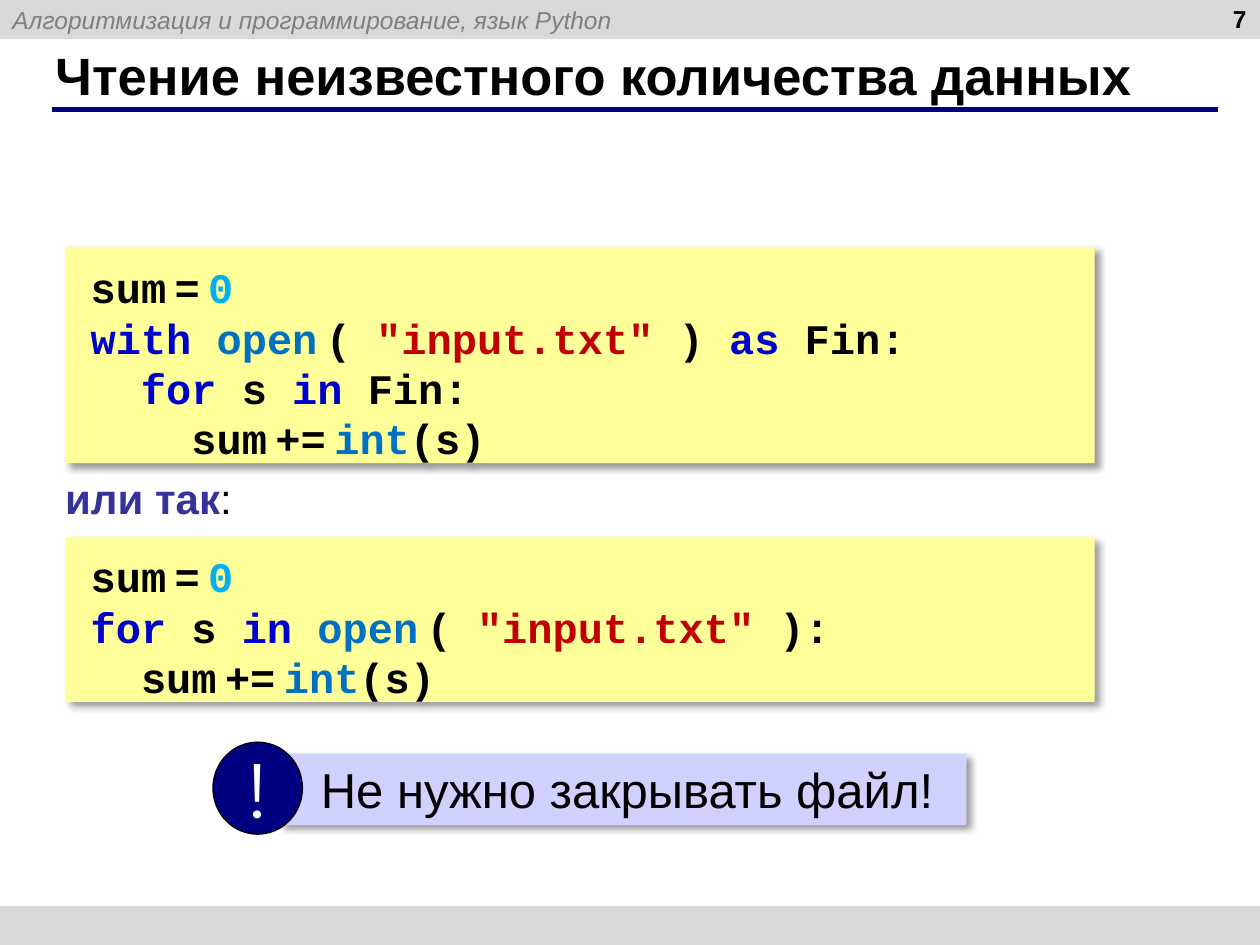
from lxml import etree
from pptx import Presentation
from pptx.dml.color import RGBColor
from pptx.enum.shapes import MSO_CONNECTOR, MSO_SHAPE
from pptx.enum.text import MSO_ANCHOR, PP_ALIGN
from pptx.oxml.ns import qn
from pptx.util import Pt

RECTANGLE, OVAL = MSO_SHAPE.RECTANGLE, MSO_SHAPE.OVAL
STRAIGHT = MSO_CONNECTOR.STRAIGHT
TOP, MIDDLE, BOTTOM = MSO_ANCHOR.TOP, MSO_ANCHOR.MIDDLE, MSO_ANCHOR.BOTTOM
LEFT, CENTER, RIGHT, JUSTIFY = PP_ALIGN.LEFT, PP_ALIGN.CENTER, PP_ALIGN.RIGHT, PP_ALIGN.JUSTIFY

WIDTH, HEIGHT = 720, 540
BAR_HEIGHT = 22.4
BLACK, NAVY, GRAY = "000000", "000080", "D9D9D9"
YELLOW, LAVENDER = "FFFF99", "D1D1FF"

CODE_COLORS = {"plain": BLACK, "keyword": "0000CC", "function": "0070C0",
               "number": "00B0F0", "string": "C00000"}
CODE_SIZE, THIN_SPACE_SIZE, CODE_LINE = 24, 8, 28.8
CODE_LEFT, CODE_WIDTH = 37.4, 588.2

THIN = (" ", "thin")
SUM_START = [("sum", "plain"), THIN, ("=", "plain"), THIN, ("0", "number")]
SUM_ADD = [("sum", "plain"), THIN, ("+=", "plain"), THIN, ("int", "function"), ("(s)", "plain")]
OPEN_FILE = [("open", "function"), THIN, ("( ", "plain"), ('"input.txt"', "string")]
FOR_IN = [("for ", "keyword"), ("s ", "plain"), ("in ", "keyword")]

# top, height, lines of (indent level, parts)
CODE_BLOCKS = [
    (141.2, 123.5, [
        (0, SUM_START),
        (0, [("with ", "keyword"), *OPEN_FILE, (" ) ", "plain"), ("as ", "keyword"),
             ("Fin:", "plain")]),
        (1, [*FOR_IN, ("Fin:", "plain")]),
        (2, SUM_ADD),
    ]),
    (306.8, 94.4, [
        (0, SUM_START),
        (0, [*FOR_IN, *OPEN_FILE, (" ):", "plain")]),
        (1, SUM_ADD),
    ]),
]


def color(value):
    return RGBColor.from_string(value)


def add_box(shapes, kind, place, fill, outline=None):
    shape = shapes.add_shape(kind, *map(Pt, place))
    shape.shadow.inherit = False
    shape.fill.solid()
    shape.fill.fore_color.rgb = color(fill)
    if outline:
        shape.line.color.rgb = color(outline)
        shape.line.width = Pt(0.75)
    else:
        shape.line.fill.background()
    return shape


def add_shadow(shape):
    effects = shape._element.spPr.find(qn("a:effectLst"))
    shadow = etree.SubElement(effects, qn("a:outerShdw"), blurRad=str(Pt(4)), dist=str(Pt(3)),
                              dir="2700000", algn="tl", rotWithShape="0")
    shade = etree.SubElement(shadow, qn("a:srgbClr"), val=BLACK)
    etree.SubElement(shade, qn("a:alpha"), val="40000")


def add_run(paragraph, text, rgb, **font_values):
    run = paragraph.add_run()
    run.text = text
    run.font.color.rgb = color(rgb)
    for name, value in font_values.items():
        setattr(run.font, name, value)


def set_frame(shape, align=LEFT, **frame_values):
    """Format the text frame and return its first paragraph."""
    frame = shape.text_frame
    for name, value in {"word_wrap": True, "vertical_anchor": TOP, **frame_values}.items():
        setattr(frame, name, value)
    frame.paragraphs[0].alignment = align
    return frame.paragraphs[0]


def add_text_box(shapes, place, **frame_values):
    return set_frame(shapes.add_textbox(*map(Pt, place)), **frame_values)


def add_code(shapes, top, height, lines):
    box = add_box(shapes, RECTANGLE, (CODE_LEFT, top, CODE_WIDTH, height), YELLOW)
    add_shadow(box)
    paragraph = set_frame(box, vertical_anchor=BOTTOM, margin_left=Pt(14.4),
                          margin_top=0, margin_bottom=0)
    for number, (level, parts) in enumerate(lines):
        if number:
            paragraph = box.text_frame.add_paragraph()
        paragraph.alignment = JUSTIFY
        paragraph.line_spacing = Pt(CODE_LINE)
        indent = [("  " * level, "plain")] if level else []
        for text, role in indent + parts:
            size = THIN_SPACE_SIZE if role == "thin" else CODE_SIZE
            add_run(paragraph, text, CODE_COLORS.get(role, BLACK),
                    name="Courier New", size=Pt(size), bold=True)


def add_callout(shapes):
    group = shapes.add_group_shape()
    message = add_box(group.shapes, RECTANGLE, (160.6, 430.6, 391.7, 41), LAVENDER)
    add_shadow(message)
    add_run(set_frame(message, margin_left=Pt(22.8)), "Не нужно закрывать файл!", BLACK,
            name="Arial", size=Pt(28))
    badge = add_box(group.shapes, OVAL, (121.7, 424.1, 51.1, 52.6), NAVY, BLACK)
    add_run(set_frame(badge, CENTER, vertical_anchor=MIDDLE, word_wrap=False), "!", "FFFFFF",
            name="Montserrat", size=Pt(44))


def main():
    presentation = Presentation()
    presentation.slide_width, presentation.slide_height = Pt(WIDTH), Pt(HEIGHT)
    slide = presentation.slides.add_slide(presentation.slide_layouts[6])
    shapes = slide.shapes

    header = add_box(shapes, RECTANGLE, (0, 0, WIDTH, BAR_HEIGHT), GRAY)
    add_run(set_frame(header, vertical_anchor=MIDDLE),
            "Алгоритмизация и программирование, язык Python", "7F7F7F",
            name="Arial", size=Pt(14), italic=True)
    add_box(shapes, RECTANGLE, (0, HEIGHT - BAR_HEIGHT, WIDTH, BAR_HEIGHT), GRAY)

    rule = shapes.add_connector(STRAIGHT, Pt(29.6), Pt(62.5), Pt(696), Pt(62.5))
    rule.line.color.rgb = color(NAVY)
    rule.line.width = Pt(3)
    etree.SubElement(rule._element.spPr, qn("a:effectLst"))

    title = add_text_box(shapes, (24.5, 23.8, 659.5, 37.4), vertical_anchor=MIDDLE)
    add_run(title, "Чтение неизвестного количества данных", BLACK,
            name="Arial", size=Pt(30), bold=True)
    page = add_text_box(shapes, (551.5, -1.4, 167.8, 37.4), align=RIGHT)
    add_run(page, "7", BLACK, name="Arial", size=Pt(14), bold=True)

    for block in CODE_BLOCKS:
        add_code(shapes, *block)

    label = add_text_box(shapes, (30.2, 266.4, 110.9, 36.7), word_wrap=False)
    add_run(label, "или так", "333399", name="Arial", size=Pt(24), bold=True)
    add_run(label, ":", BLACK, name="Arial", size=Pt(24))

    add_callout(shapes)
    presentation.save("out.pptx")


if __name__ == "__main__":
    main()
